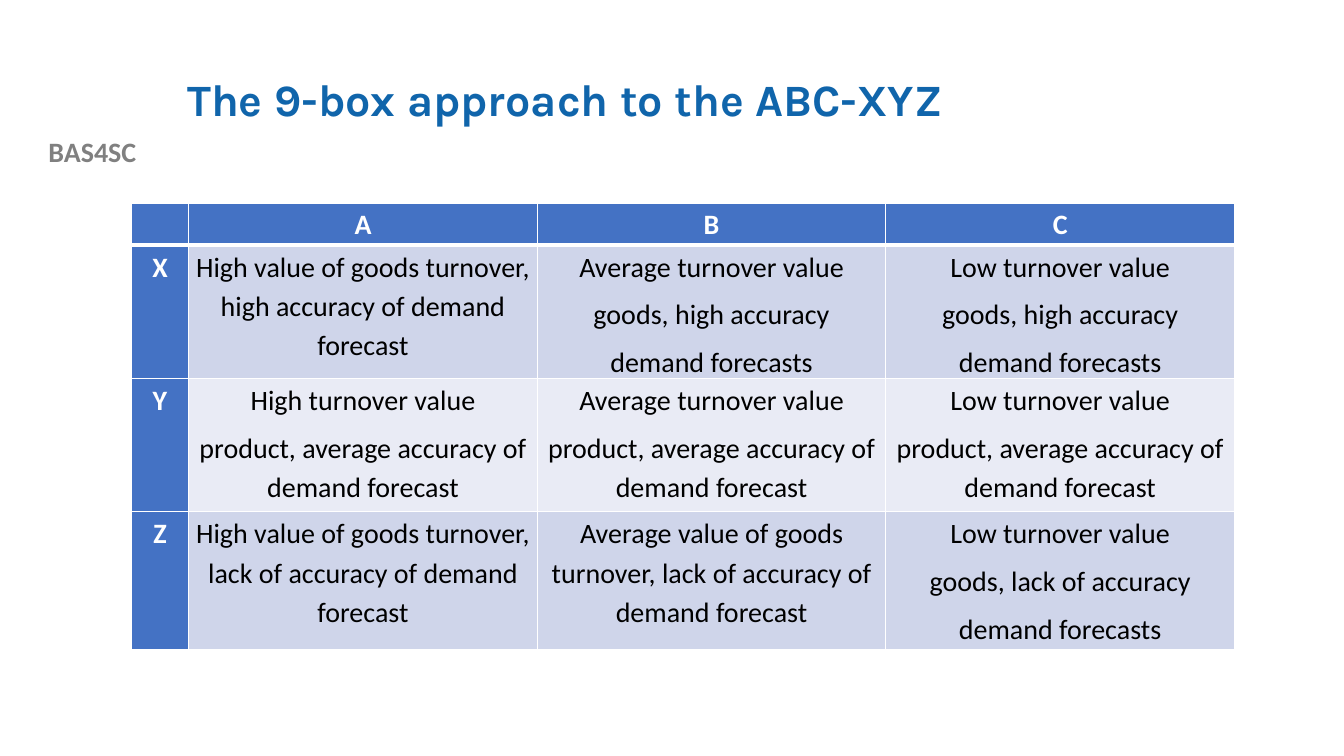
from lxml.etree import SubElement
from pptx import Presentation
from pptx.dml.color import RGBColor
from pptx.enum.text import MSO_ANCHOR as Anchor, PP_ALIGN as Align
from pptx.oxml.ns import qn
from pptx.util import Pt

COLORS = {
    "title": "1065AB",
    "label": "808080",
    "header": "4472C4",
    "odd": "CFD5EA",
    "even": "E9EBF5",
    "light": "FFFFFF",
    "dark": "000000",
}

MATRIX = [
    ["", "A", "B", "C"],
    [
        "X",
        "High value of goods turnover, high accuracy of demand forecast",
        "Average turnover value\ngoods, high accuracy\ndemand forecasts",
        "Low turnover value\ngoods, high accuracy\ndemand forecasts",
    ],
    ["Y"] + [
        f"{level} turnover value\nproduct, average accuracy of demand forecast"
        for level in ("High", "Average", "Low")
    ],
    [
        "Z",
        "High value of goods turnover, lack of accuracy of demand forecast",
        "Average value of goods turnover, lack of accuracy of demand forecast",
        "Low turnover value\ngoods, lack of accuracy\ndemand forecasts",
    ],
]
COLUMN_WIDTHS = [41, 249, 249, 249]
ROW_HEIGHTS = [30.2, 95.2, 95.2, 98.8]


def style_para(para, font, size, color, bold):
    for span in para.runs:
        span.font.name = font
        span.font.size = Pt(size)
        span.font.bold = bold
        span.font.color.rgb = RGBColor.from_string(COLORS[color])


def add_text(page, text, left, top, width, height, font, size, color):
    box = page.shapes.add_textbox(Pt(left), Pt(top), Pt(width), Pt(height))
    frame = box.text_frame
    frame.word_wrap = True
    frame.text = text
    para = frame.paragraphs[0]
    style_para(para, font, size, color, True)
    return frame, para


def add_heading(page, left, top, width, height):
    frame, para = add_text(page, "The 9-box approach to the ABC-XYZ",
                           left, top, width, height, "Karla", 32, "title")
    frame.vertical_anchor = Anchor.MIDDLE
    para.line_spacing = 0.9


def add_project_label(page, left, top, width, height):
    frame, para = add_text(page, "BAS4SC", left, top, width, height,
                           "Calibri", 20, "label")
    para.alignment = Align.CENTER


def add_border(cell, side, width):
    line = SubElement(cell._tc.get_or_add_tcPr(), qn(f"a:ln{side}"), w=str(Pt(width)))
    fill = SubElement(line, qn("a:solidFill"))
    SubElement(fill, qn("a:srgbClr"), val=COLORS["light"])


def style_cell(cell, text, row, column):
    is_header = row == 0 or column == 0
    cell.margin_left = cell.margin_right = Pt(4.5)
    cell.margin_top = cell.margin_bottom = 0
    add_border(cell, "L", 1)
    add_border(cell, "R", 1)
    add_border(cell, "T", 3 if row == 1 else 1)
    add_border(cell, "B", 3 if row == 0 else 1)
    cell.fill.solid()
    fill = "header" if is_header else "odd" if row % 2 else "even"
    cell.fill.fore_color.rgb = RGBColor.from_string(COLORS[fill])
    cell.text_frame.text = text
    for para in cell.text_frame.paragraphs:
        para.alignment = Align.CENTER
        para.line_spacing = 1.15
        para.space_after = Pt(6)
        style_para(para, "Calibri", 20, "light" if is_header else "dark", is_header)


def add_matrix(page, left, top):
    table = page.shapes.add_table(
        len(ROW_HEIGHTS), len(COLUMN_WIDTHS), Pt(left), Pt(top),
        Pt(sum(COLUMN_WIDTHS)), Pt(sum(ROW_HEIGHTS))).table
    for column, width in zip(table.columns, COLUMN_WIDTHS):
        column.width = Pt(width)
    for row, height in zip(table.rows, ROW_HEIGHTS):
        row.height = Pt(height)
    for row, texts in enumerate(MATRIX):
        for column, text in enumerate(texts):
            style_cell(table.cell(row, column), text, row, column)


def main():
    deck = Presentation()
    deck.slide_width, deck.slide_height = Pt(960), Pt(540)
    page = deck.slides.add_slide(deck.slide_layouts[6])
    add_project_label(page, 0, 92.2, 132, 31.5)
    add_heading(page, 126.7, 28.8, 773.3, 87.8)
    add_matrix(page, 93.8, 145)
    deck.save("out.pptx")


if __name__ == "__main__":
    main()
